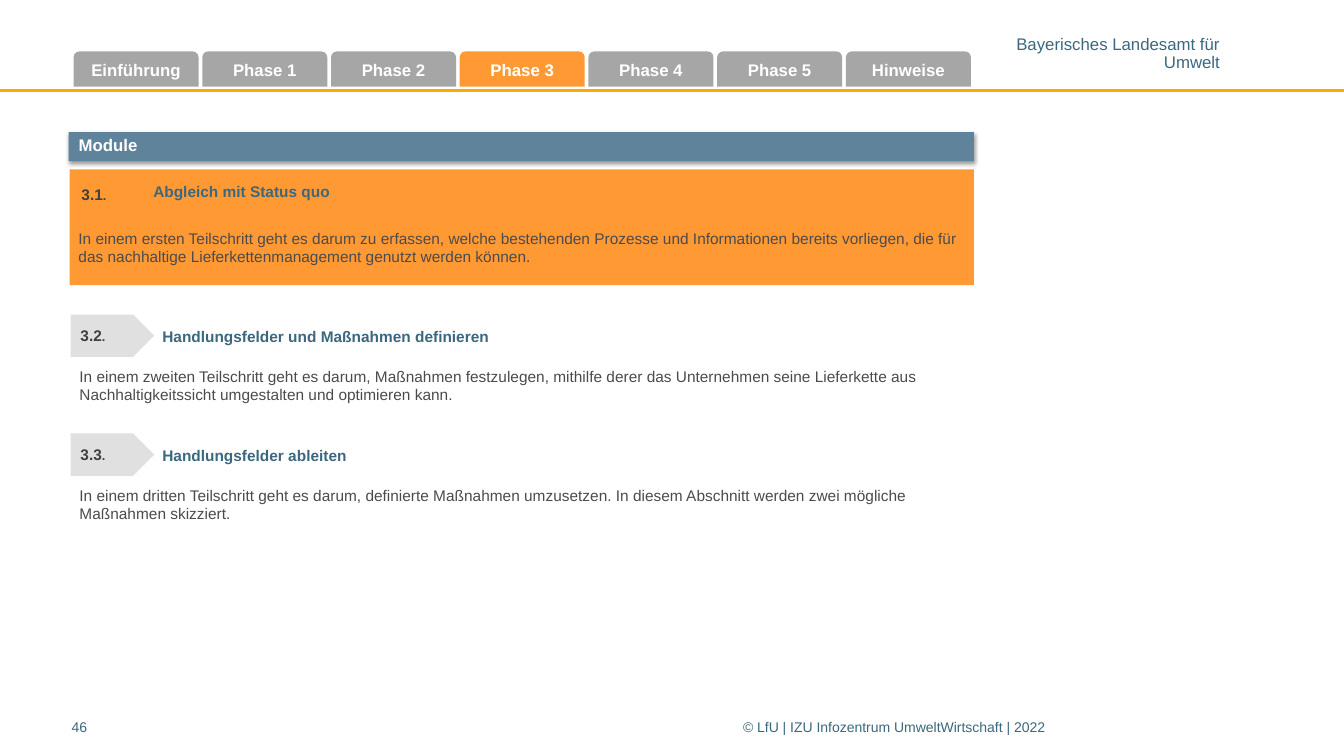
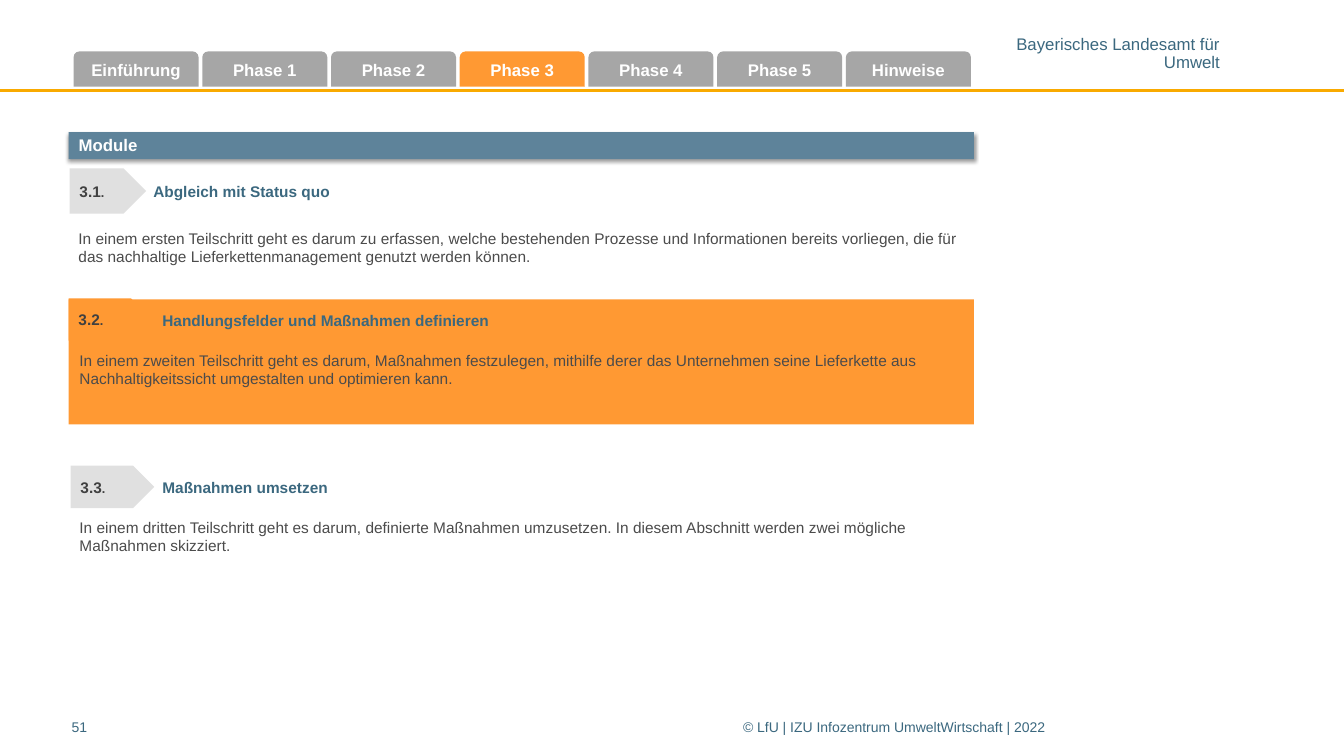
import dataclasses

import pptx
import pptx.dml.color
import pptx.enum.shapes
import pptx.enum.text
import pptx.oxml
import pptx.oxml.ns
import pptx.util

Inches = pptx.util.Inches
Pt = pptx.util.Pt
Shape = pptx.enum.shapes.MSO_SHAPE
Align = pptx.enum.text.PP_ALIGN
Anchor = pptx.enum.text.MSO_ANCHOR

COLORS = {
    "accent": "FF9933", "rule": "F9AA00", "tab": "A6A6A6", "plate": "E0E0E0",
    "band": "5E839A", "heading": "3B687F", "body": "4B4B4B",
    "number": "404040", "white": "FFFFFF",
}
FONT = "Arial"
TABS = ["Einführung", "Phase 1", "Phase 2", "Phase 3", "Phase 4", "Phase 5", "Hinweise"]
ACTIVE_TAB = "Phase 3"
AGENCY = "Bayerisches Landesamt für\nUmwelt"
COPYRIGHT = "© LfU | IZU\u00a0Infozentrum UmweltWirtschaft | 2022"
BODIES = {
    "3.1": "In einem ersten Teilschritt geht es darum zu erfassen, welche bestehenden "
           "Prozesse und Informationen bereits vorliegen, die für das nachhaltige "
           "Lieferkettenmanagement genutzt werden können.",
    "3.2": "In einem zweiten Teilschritt geht es darum, Maßnahmen festzulegen, mithilfe "
           "derer das Unternehmen seine Lieferkette aus Nachhaltigkeitssicht umgestalten "
           "und optimieren kann.",
    "3.3": "In einem dritten Teilschritt geht es darum, definierte Maßnahmen umzusetzen. "
           "In diesem Abschnitt werden zwei mögliche Maßnahmen skizziert.",
}


@dataclasses.dataclass
class Module:
    number: str
    heading: str
    top: float
    plate_left: float = 0.7
    plate_shift: float = 0
    plate_size: tuple = (0.83, 0.42)
    heading_left: float = 1.41
    body_left: float = 0.69
    body_shift: float = 0.47
    active: bool = False


def first_module(**options):
    return Module("3.1", "Abgleich mit Status quo", 1.68, plate_size=(0.76, 0.45),
                  heading_left=1.32, body_left=0.68, body_shift=0.54, **options)


def rgb(name):
    return pptx.dml.color.RGBColor.from_string(COLORS[name])


def write_text(shape, text, *, size=11, color="body", bold=False, align=Align.LEFT,
               anchor=Anchor.TOP, insets=(0.1, 0.05, 0.1, 0.05), spacing=None,
               wrap=True, tail="", tail_size=9):
    """Fill a shape with one paragraph per line; the tail ends the last one."""
    frame = shape.text_frame
    frame.word_wrap = wrap
    frame.vertical_anchor = anchor
    (frame.margin_left, frame.margin_top,
     frame.margin_right, frame.margin_bottom) = map(Inches, insets)
    for index, line in enumerate(text.split("\n")):
        para = frame.add_paragraph() if index else frame.paragraphs[0]
        para.alignment = align
        if spacing:
            para.line_spacing = spacing
        para.font.name, para.font.size, para.font.bold = FONT, Pt(size), bold
        para.font.color.rgb = rgb(color)
        para.add_run().text = line
    if tail:
        span = para.add_run()
        span.text, span.font.size = tail, Pt(tail_size)


class ModuleDeck:
    def __init__(self):
        self.deck = pptx.Presentation()
        self.deck.slide_width, self.deck.slide_height = Inches(13.33), Inches(7.5)
        self.page = None

    def text(self, left, top, width, height, text, **style):
        box = self.page.shapes.add_textbox(*map(Inches, (left, top, width, height)))
        write_text(box, text, **style)

    def shape(self, kind, left, top, width, height, fill):
        shape = self.page.shapes.add_shape(kind, *map(Inches, (left, top, width, height)))
        shape.shadow.inherit = False
        shape.fill.solid()
        shape.fill.fore_color.rgb = rgb(fill)
        shape.line.fill.background()
        return shape

    def rule(self):
        line = self.page.shapes.add_connector(
            pptx.enum.shapes.MSO_CONNECTOR.STRAIGHT,
            Inches(0), Inches(0.9), Inches(13.33), Inches(0.9))
        line.line.color.rgb = rgb("rule")
        line.line.width = Pt(2)
        pptx.oxml.ns.qn("a:effectLst")
        line._element.spPr.append(pptx.oxml.parse_xml(
            f'<a:effectLst {pptx.oxml.ns.nsdecls("a")}/>'))

    def title(self, text, height):
        title = self.page.shapes.title
        title.left, title.top, title.width, title.height = map(
            Inches, (0.68, 1.31, 8.98, height))
        title.fill.solid()
        title.fill.fore_color.rgb = rgb("band")
        title.text_frame.auto_size = pptx.enum.text.MSO_AUTO_SIZE.NONE
        write_text(title, text, size=12, color="white", bold=True, spacing=Pt(12.8))
        # Soft shadow straight below the band
        title.shadow.inherit = False
        effects = title._element.spPr.find(pptx.oxml.ns.qn("a:effectLst"))
        effects.append(pptx.oxml.parse_xml(
            f'<a:outerShdw {pptx.oxml.ns.nsdecls("a")} blurRad="{Pt(3.1)}" '
            f'dist="{Pt(1.6)}" dir="5400000" algn="t" rotWithShape="0">'
            '<a:srgbClr val="000000"><a:alpha val="38000"/></a:srgbClr></a:outerShdw>'))

    def tabs(self):
        pitch = (8.39 - 0.73) / (len(TABS) - 1)
        for index, label in enumerate(TABS):
            tab = self.shape(Shape.ROUND_2_SAME_RECTANGLE, 0.73 + index * pitch, 0.51,
                             1.24, 0.35, "accent" if label == ACTIVE_TAB else "tab")
            write_text(tab, label, size=12, color="white", bold=True, align=Align.CENTER,
                       anchor=Anchor.MIDDLE, insets=(0.04, 0.05, 0.04, 0.05))

    def footer(self, left, width, text):
        self.text(left, 7.08, width, 0.31, text, size=10, color="heading",
                  insets=(0, 0.05, 0, 0.05))

    def module(self, module):
        self.text(module.body_left, module.top + module.body_shift, 8.93, 0.47,
                  BODIES[module.number])
        self.text(module.heading_left, module.top, 9.63 - module.heading_left, 0.44,
                  module.heading, color="heading", bold=True, anchor=Anchor.MIDDLE,
                  insets=(0.2, 0.06, 0.11, 0.06))
        plate = self.shape(Shape.PENTAGON, module.plate_left,
                           module.top + module.plate_shift, *module.plate_size,
                           "accent" if module.active else "plate")
        write_text(plate, module.number, color="number", bold=True,
                   anchor=Anchor.MIDDLE, tail=".")

    def add_page(self, number, band_height, highlight, modules):
        self.page = self.deck.slides.add_slide(self.deck.slide_layouts[5])
        # Header
        self.rule()
        self.text(10.07, 0.37, 2.03, 0.34, AGENCY, size=12, color="heading",
                  align=Align.RIGHT, insets=(0, 0, 0, 0), spacing=0.85, wrap=False)
        self.tabs()
        self.title("Module", band_height)
        # Modules, with the current one highlighted
        self.shape(Shape.RECTANGLE, *highlight, "accent")
        for module in modules:
            self.module(module)
        # Footer
        self.footer(0.71, 0.7, number)
        self.footer(7.37, 5.36, COPYRIGHT)


def main():
    slides = ModuleDeck()
    measures = "Handlungsfelder und Maßnahmen definieren"
    slides.add_page("46", 0.29, (0.69, 1.68, 8.97, 1.15), [
        first_module(plate_left=0.71, plate_shift=0.02, active=True),
        Module("3.2", measures, 3.12),
        Module("3.3", "Handlungsfelder ableiten", 4.3),
    ])
    slides.add_page("51", 0.27, (0.68, 2.97, 8.98, 1.24), [
        first_module(plate_left=0.69, plate_shift=-0.01),
        Module("3.2", measures, 2.96, plate_left=0.68, active=True),
        Module("3.3", "Maßnahmen umsetzen", 4.62),
    ])
    slides.deck.save("out.pptx")


if __name__ == "__main__":
    main()
